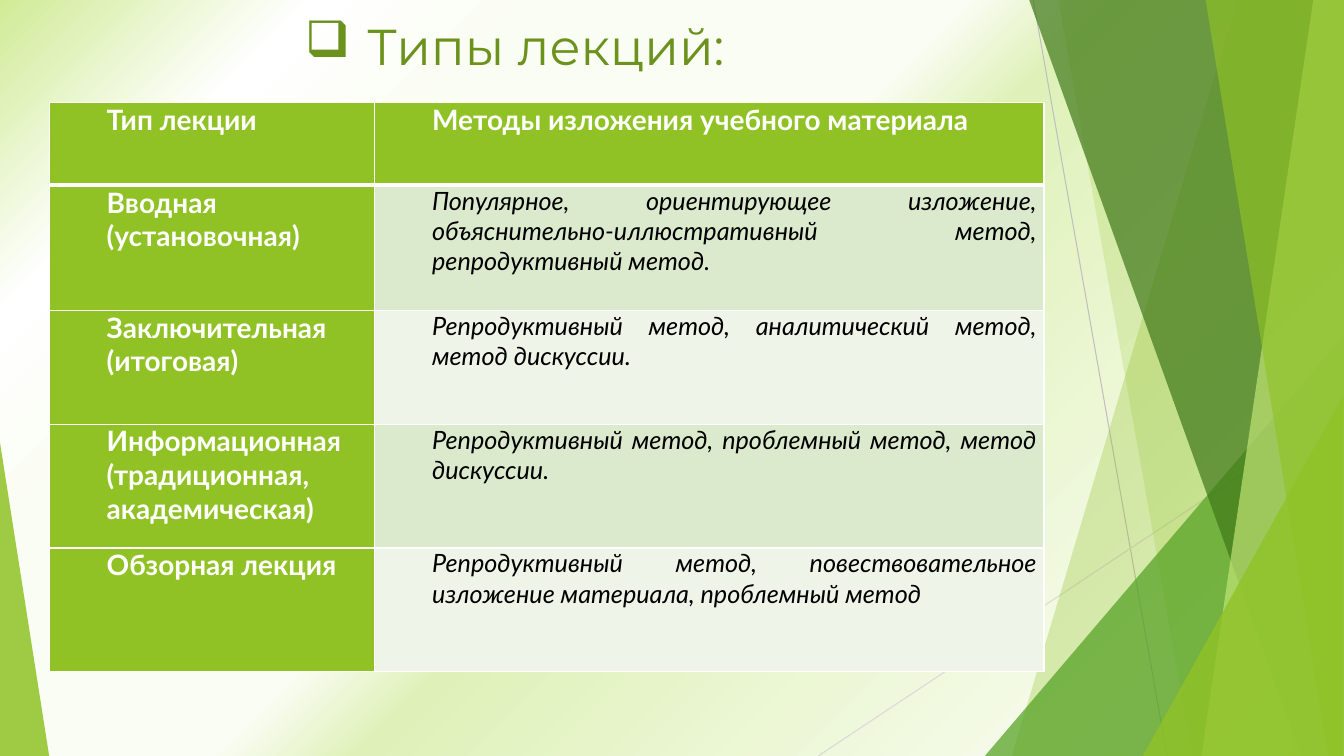
import pptx
import pptx.dml.color
import pptx.enum.shapes
import pptx.enum.text
import pptx.oxml.ns
import pptx.util
from lxml import etree

Cm, Pt = pptx.util.Cm, pptx.util.Pt
qn = pptx.oxml.ns.qn
PP_ALIGN = pptx.enum.text.PP_ALIGN

WIDTH, HEIGHT = 33.87, 19.05
GREEN = "90C226"


def paint(fill, color):
    fill.solid()
    fill.fore_color.rgb = pptx.dml.color.RGBColor.from_string(color)


def add_run(paragraph, text, font_name, size, color):
    run = paragraph.add_run()
    run.text = text
    run.font.name = font_name
    run.font.size = Pt(size)
    paint(run.font.fill, color)
    return run


deck = pptx.Presentation()
deck.slide_width, deck.slide_height = Cm(WIDTH), Cm(HEIGHT)
slide = deck.slides.add_slide(deck.slide_layouts[6])
shapes = slide.shapes

# Diagonal background gradient
slide.background.fill.gradient()
stops = slide.element.find(".//" + qn("a:gsLst"))
for default_stop in list(stops):
    stops.remove(default_stop)
for percent, color in [(0, "D0EB96"), (15, "FFFFFF"), (27, "FAFDF3"), (46, "FAFDF3"),
                       (53, "DFF1B9"), (91, "FAFDF3"), (100, "D0EB96")]:
    stop = etree.SubElement(stops, qn("a:gs"), pos=str(percent * 1000))
    etree.SubElement(stop, qn("a:srgbClr"), val=color)
slide.element.find(".//" + qn("a:lin")).set("ang", str(45 * 60000))

# Thin lines behind the facets
for x1, y1, x2, y2, color in [(26.04, 0, 29.41, HEIGHT, "BFBFBF"),
                              (WIDTH, 10.24, 20.62, HEIGHT, "D9D9D9")]:
    ray = shapes.add_connector(pptx.enum.shapes.MSO_CONNECTOR.STRAIGHT,
                               Cm(x1), Cm(y1), Cm(x2), Cm(y2))
    paint(ray.line.fill, color)
    ray.line.width = Pt(0.75)
    etree.SubElement(ray.element.spPr, qn("a:effectLst"))

# Bands (top x, bottom x) reach the right edge;
# triangles are (left, top, width, height, apex position)
facets = [
    ((31.19, 25.5), GREEN, 30),
    ((26.67, 30.05), GREEN, 20),
    ((24.82, 8.46, 9.04, 10.59, 1), "54A021", 72),
    ((25.93, 32.79), "3F7819", 70),
    ((33.1, 30.28), "C0E474", 70),
    ((30.38, 33.48), GREEN, 65),
    ((28.8, 9.98, 5.05, 9.07, 1), GREEN, 80),
    ((0, 11.15, 1.24, 7.9, 0), GREEN, 85),
]
for geometry, color, opacity in facets:
    if len(geometry) == 2:
        top_x, bottom_x = geometry
        outline = shapes.build_freeform(Cm(top_x), Cm(-0.02))
        outline.add_line_segments([(Cm(WIDTH), Cm(-0.02)), (Cm(WIDTH), Cm(HEIGHT)),
                                   (Cm(bottom_x), Cm(HEIGHT))])
        facet = outline.convert_to_shape()
    else:
        *box, apex = geometry
        facet = shapes.add_shape(pptx.enum.shapes.MSO_SHAPE.ISOSCELES_TRIANGLE,
                                 *[Cm(length) for length in box])
        facet.adjustments[0] = apex
    facet.shadow.inherit = False
    paint(facet.fill, color)
    facet.line.fill.background()
    etree.SubElement(facet.element.find(".//" + qn("a:srgbClr")), qn("a:alpha"),
                     val=str(opacity * 1000))

# Title with a box bullet
title = shapes.add_textbox(Cm(-0.36), Cm(0.25), Cm(26.67), Cm(2.18)).text_frame
title.word_wrap = True
heading = title.paragraphs[0]
heading.alignment = PP_ALIGN.CENTER
add_run(heading, "Типы лекций:", "Montserrat", 36, "6C921D")
heading_format = heading._p.get_or_add_pPr()
heading_format.set("marL", str(Cm(1.57)))
heading_format.set("indent", str(Cm(-1.57)))
etree.SubElement(heading_format, qn("a:buChar"), char="❑")

# Lecture types and their methods
lectures = [
    ("Тип лекции", "Методы изложения учебного материала"),
    ("Вводная (установочная)",
     "Популярное, ориентирующее изложение, объяснительно-иллюстративный метод, "
     "репродуктивный метод."),
    ("Заключительная (итоговая)",
     "Репродуктивный метод, аналитический метод, метод дискуссии."),
    ("Информационная (традиционная, академическая)",
     "Репродуктивный метод, проблемный метод, метод дискуссии."),
    ("Обзорная лекция",
     "Репродуктивный метод, повествовательное изложение материала, проблемный метод"),
]
column_widths = [8.2, 16.87]
row_heights = [2.08, 3.15, 2.87, 3.12, 3.12]
table = shapes.add_table(len(lectures), 2, Cm(1.24), Cm(2.59),
                         Cm(sum(column_widths)), Cm(sum(row_heights))).table
for column, width in zip(table.columns, column_widths):
    column.width = Cm(width)
for row, height in zip(table.rows, row_heights):
    row.height = Cm(height)

for row_index, lecture in enumerate(lectures):
    for column_index, text in enumerate(lecture):
        cell = table.cell(row_index, column_index)
        is_heading = row_index == 0 or column_index == 0
        cell.margin_left = cell.margin_right = Cm(0.18)
        cell.margin_top = cell.margin_bottom = 0

        cell_format = cell._tc.get_or_add_tcPr()
        border_widths = {"a:lnL": 1, "a:lnR": 1,
                         "a:lnT": 3 if row_index == 1 else 1,
                         "a:lnB": 3 if row_index == 0 else 1}
        for side, width in border_widths.items():
            border = etree.SubElement(cell_format, qn(side), w=str(Pt(width)))
            border_fill = etree.SubElement(border, qn("a:solidFill"))
            etree.SubElement(border_fill, qn("a:srgbClr"), val="FFFFFF")
        stripe = "DBE9CD" if row_index % 2 else "EEF4E8"
        paint(cell.fill, GREEN if is_heading else stripe)

        paragraph = cell.text_frame.paragraphs[0]
        paragraph.alignment = PP_ALIGN.JUSTIFY
        paragraph._p.get_or_add_pPr().set("marL", str(Cm(1.27)))
        run = add_run(paragraph, text, "Lato", 20 if is_heading else 18,
                      "FFFFFF" if is_heading else "000000")
        run.font.bold = is_heading
        run.font.italic = not is_heading

deck.save("out.pptx")
